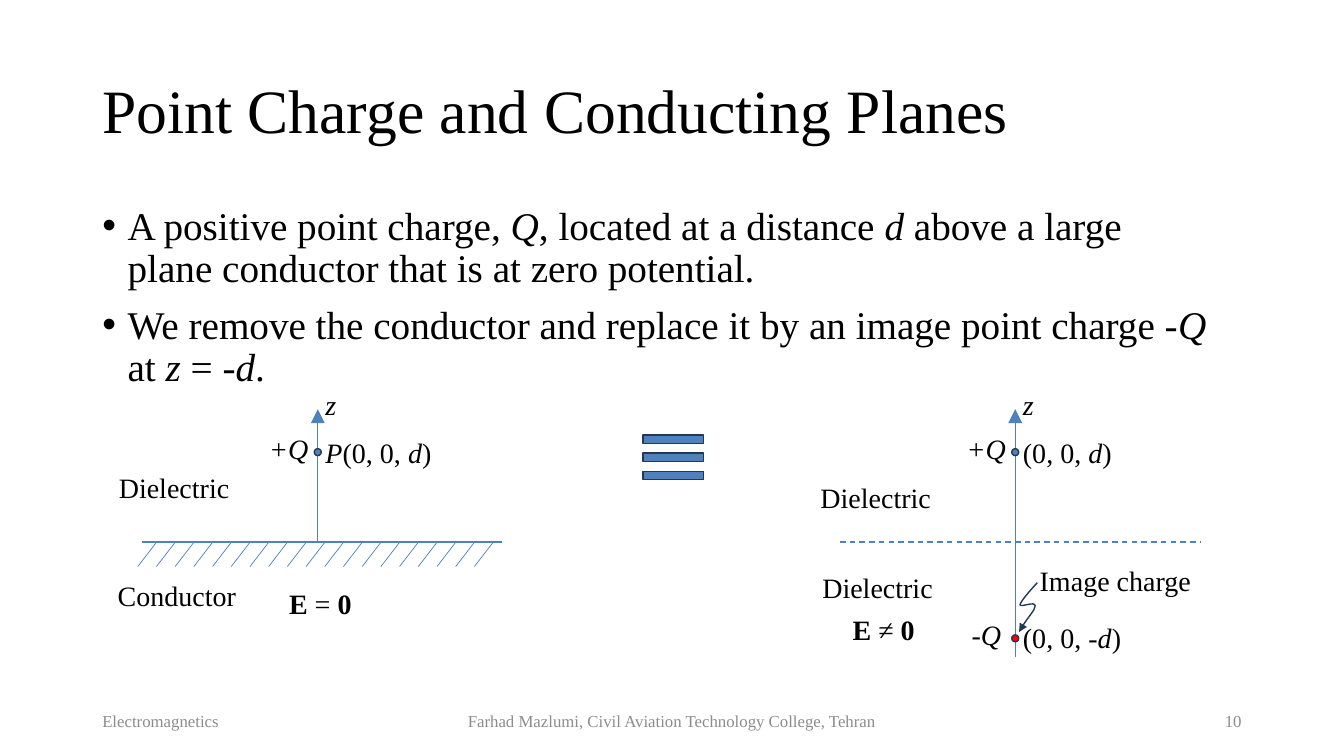
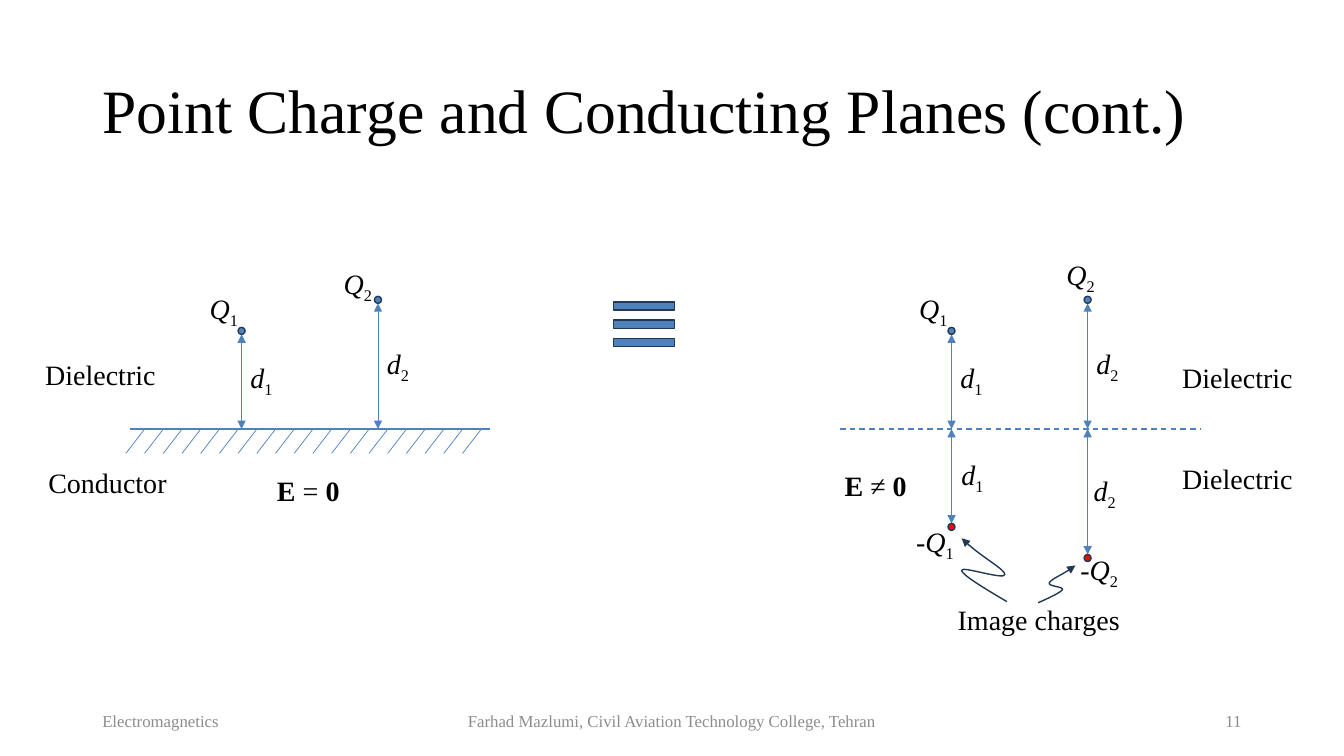
from dataclasses import dataclass

from lxml.etree import SubElement
from pptx import Presentation
from pptx.dml.color import RGBColor
from pptx.enum.dml import MSO_LINE
from pptx.enum.shapes import MSO_CONNECTOR, MSO_SHAPE
from pptx.enum.text import MSO_ANCHOR, MSO_AUTO_SIZE, PP_ALIGN
from pptx.oxml.ns import qn
from pptx.util import Pt


@dataclass(frozen=True)
class Theme:
    font: str = "Times New Roman"
    ink: RGBColor = RGBColor(0, 0, 0)
    muted: RGBColor = RGBColor(0x8C, 0x8C, 0x8C)
    blue: RGBColor = RGBColor(0x4F, 0x81, 0xBD)
    navy: RGBColor = RGBColor(0x23, 0x39, 0x53)
    red: RGBColor = RGBColor(0xFF, 0, 0)
    title_size: int = 44
    body_size: int = 28
    label_size: int = 20
    footer_size: int = 12


THEME = Theme()
TITLE_LAYOUT, BODY_LAYOUT = 5, 1
PLANE_WIDTH = 257
DOT = 5

FOOTERS = [
    (66, 216, PP_ALIGN.LEFT, "Electromagnetics"),
    (318, 324, PP_ALIGN.CENTER,
     "Farhad Mazlumi, Civil Aviation Technology College, Tehran"),
]
BULLETS = [
    ["A positive point charge, ", ("Q", "i"), ", located at a distance ", ("d", "i"),
     " above a large plane conductor that is at zero potential."],
    ["We remove the conductor and replace it by an image point charge -", ("Q", "i"),
     " at ", ("z", "i"), " = -", ("d", "i"), "."],
]
FIELD_ZERO = [("E", "b"), " = ", ("0", "b")]
FIELD_NONZERO = [("E ", "b"), "≠ ", ("0", "b")]


def indexed(symbol, index):
    return [(symbol, "i"), (str(index), "sub")]


def place(box, left, top, width, height):
    box.left, box.top, box.width, box.height = map(Pt, (left, top, width, height))


def write(para, spans, size, color=THEME.ink, align=PP_ALIGN.LEFT):
    para.alignment = align
    para.font.name = THEME.font
    para.font.size = Pt(size)
    para.font.color.rgb = color
    for item in spans:
        text, style = (item, "") if isinstance(item, str) else item
        span = para.add_run()
        span.text = text
        if style == "i":
            span.font.italic = True
        elif style == "b":
            span.font.bold = True
        elif style == "sub":
            span._r.get_or_add_rPr().set("baseline", "-25000")


def add_text(page, left, top, width, height, spans, size, **style):
    box = page.shapes.add_textbox(Pt(left), Pt(top), Pt(width), Pt(height))
    box.text_frame.word_wrap = True
    write(box.text_frame.paragraphs[0], spans, size, **style)
    return box


def add_label(page, left, top, width, spans, align=PP_ALIGN.LEFT):
    spans = [spans] if isinstance(spans, str) else spans
    add_text(page, left, top, width, 31.5, spans, THEME.label_size, align=align)


def add_page(deck, layout, title, number):
    page = deck.slides.add_slide(deck.slide_layouts[layout])
    heading = page.shapes.title
    place(heading, 66, 28.8, 828, 104.4)
    frame = heading.text_frame
    frame.auto_size = MSO_AUTO_SIZE.NONE
    frame.vertical_anchor = MSO_ANCHOR.MIDDLE
    frame.paragraphs[0].line_spacing = 0.9
    write(frame.paragraphs[0], [title], THEME.title_size)
    for left, width, align, text in FOOTERS + [(678, 216, PP_ALIGN.RIGHT, str(number))]:
        box = add_text(page, left, 500.4, width, 28.8, [text], THEME.footer_size,
                       color=THEME.muted, align=align)
        box.text_frame.vertical_anchor = MSO_ANCHOR.MIDDLE
    return page


def fill_body(page, bullets):
    body = page.placeholders[1]
    place(body, 66, 144, 807, 342.7)
    frame = body.text_frame
    frame.auto_size = MSO_AUTO_SIZE.NONE
    for position, spans in enumerate(bullets):
        para = frame.add_paragraph() if position else frame.paragraphs[0]
        para.line_spacing = 0.9
        para.space_before = Pt(10)
        write(para, spans, THEME.body_size)
        properties = para._p.get_or_add_pPr()
        properties.set("marL", str(Pt(18)))
        properties.set("indent", str(-Pt(18)))


def add_arrowheads(shape, ends, size="med"):
    outline = shape.element.spPr.find(qn("a:ln"))
    for end in ends:
        SubElement(outline, qn(f"a:{end}"), type="triangle", w=size, len=size)


def add_line(page, start, end, weight=0.5, dash=None, ends=(), size="med"):
    line = page.shapes.add_connector(MSO_CONNECTOR.STRAIGHT, *map(Pt, start + end))
    line.line.color.rgb = THEME.blue
    line.line.width = Pt(weight)
    if dash:
        line.line.dash_style = dash
    add_arrowheads(line, ends, size)
    SubElement(line.element.spPr, qn("a:effectLst"))


def add_solid(page, kind, left, top, width, height, color=THEME.blue):
    shape = page.shapes.add_shape(kind, *map(Pt, (left, top, width, height)))
    shape.shadow.inherit = False
    shape.fill.solid()
    shape.fill.fore_color.rgb = color
    shape.line.color.rgb = THEME.navy
    shape.line.width = Pt(1)


def add_charge(page, x, y, color=THEME.blue):
    add_solid(page, MSO_SHAPE.OVAL, x - DOT / 2, y - DOT / 2, DOT, DOT, color)


def add_equivalence(page, left, top):
    for row in range(3):
        add_solid(page, MSO_SHAPE.MATH_MINUS, left, top + 13 * row, 59, 25.2)


def add_conductor(page, left, y):
    add_line(page, (left, y), (left + PLANE_WIDTH, y), 1.5)
    for stroke in range(19):
        x = left + 10.5 + 13.36 * stroke
        add_line(page, (x, y), (x - 13.5, y + 17.5))


def add_image_plane(page, y):
    add_line(page, (600, y), (600 + PLANE_WIDTH, y), 1, MSO_LINE.DASH)


def add_axis(page, x, bottom):
    add_line(page, (x, bottom), (x, 292.3), ends=["tailEnd"], size="lg")


def add_measured_charge(page, x, plane, rise, color=THEME.blue):
    y = plane - rise
    edge = y + DOT / 2 if rise > 0 else y - DOT / 2
    add_line(page, (x, plane), (x, edge), ends=["headEnd", "tailEnd"])
    add_charge(page, x, y, color)


def add_curved_arrow(page, points):
    corners = [tuple(map(Pt, point)) for point in points]
    builder = page.shapes.build_freeform(*corners[0])
    builder.add_line_segments(corners[1:], close=False)
    curve = builder.convert_to_shape()
    curve.shadow.inherit = False
    curve.fill.background()
    curve.line.color.rgb = THEME.navy
    curve.line.width = Pt(1)
    add_arrowheads(curve, ["tailEnd"])
    outline = next(curve.element.iter(qn("a:path")))
    segments = outline.findall(qn("a:lnTo"))
    for first in range(0, len(segments), 3):
        bezier = SubElement(outline, qn("a:cubicBezTo"))
        for segment in segments[first:first + 3]:
            bezier.append(segment[0])
            outline.remove(segment)


def build_single_charge(deck):
    page = add_page(deck, BODY_LAYOUT, "Point Charge and Conducting Planes", 10)
    fill_body(page, BULLETS)
    plane, charge_y, image_y = 387.2, 323, 456
    left_axis, right_axis = 227, 725.2

    add_conductor(page, 101.4, plane)
    add_image_plane(page, plane)
    for x, bottom in [(left_axis, plane), (right_axis, 469.4)]:
        add_axis(page, x, bottom)
        add_charge(page, x, charge_y)
        add_label(page, x - 1.6, 272.9, 24, [("z", "i")])
        add_label(page, x - 41.8, 304.6, 42.5, [("+Q", "i")])
    add_charge(page, right_axis, image_y, THEME.red)
    add_equivalence(page, 451.4, 301)

    coordinates = ["(0, 0,", (" d", "i"), ")"]
    add_label(page, left_axis - 1.6, 307.4, 91, [("P", "i")] + coordinates)
    add_label(page, right_axis - 1.6, 307.4, 91, coordinates)
    add_label(page, right_axis - 1.6, 439.9, 91, ["(0, 0,", (" -d", "i"), ")"])
    add_label(page, 686.9, 437.8, 42.5, [("-Q", "i")])
    for left, top, text in [(77.8, 332.6, "Dielectric"), (77, 409.7, "Conductor"),
                            (579, 339.8, "Dielectric"), (580.3, 403.9, "Dielectric")]:
        add_label(page, left, top, 100, text)
    add_label(page, 199.4, 415.4, 61, FIELD_ZERO)
    add_label(page, 601.9, 434.2, 61, FIELD_NONZERO)
    add_label(page, 730.8, 398.9, 131.8, "Image charge", PP_ALIGN.CENTER)
    add_curved_arrow(page, [
        (740.9, 416.2), (735.1, 422.6), (729.4, 429.1), (728.6, 432), (728.6, 434.2),
        (739.4, 429.1), (739.4, 432.7), (739.4, 435.6), (733, 442.1), (727.9, 451.4)])


def build_two_charges(deck):
    page = add_page(deck, TITLE_LAYOUT, "Point Charge and Conducting Planes (cont.)", 11)
    plane = 306.4
    rises = {1: 70, 2: 92.2}
    distance_tops = {1: 254.2, 2: 244.1}
    conductor_side = {1: 172.6, 2: 270}
    image_side = {1: 679.7, 2: 776.9}

    add_conductor(page, 92.9, plane)
    add_image_plane(page, plane)
    add_equivalence(page, 430.4, 206)
    for side in (conductor_side, image_side):
        for index, x in side.items():
            add_measured_charge(page, x, plane, rises[index])
            add_label(page, x - 0.8, distance_tops[index], 33, indexed("d", index))
    for index, x in image_side.items():
        add_measured_charge(page, x, plane, -rises[index], THEME.red)

    for left, top, symbol, index in [
            (142.6, 204.5, "Q", 1), (238.3, 186.5, "Q", 2),
            (649.4, 204.5, "Q", 1), (754.6, 180.7, "Q", 2),
            (647.3, 370.8, "-Q", 1), (764.6, 391, "-Q", 2),
            (679.7, 323.3, "d", 1), (774, 334.8, "d", 2)]:
        add_label(page, left, top, 42.5, indexed(symbol, index))
    for left, top, text in [(25.2, 252, "Dielectric"), (27.4, 329, "Conductor"),
                            (837.4, 254.2, "Dielectric"), (837.4, 326.2, "Dielectric")]:
        add_label(page, left, top, 100, text)
    add_label(page, 190.8, 334.8, 61, FIELD_ZERO)
    add_label(page, 596.2, 331.2, 61, FIELD_NONZERO)
    add_label(page, 676.1, 427, 131.8, "Image charges", PP_ALIGN.CENTER)
    add_curved_arrow(page, [
        (719.3, 429.8), (703.4, 420.5), (686.9, 410.4), (686.9, 407.5), (686.2, 403.9),
        (717.8, 414.7), (717.8, 410.4), (717.8, 406.8), (699.8, 397.4), (686.9, 384.5)])
    add_curved_arrow(page, [
        (741.6, 430.6), (749.5, 427), (757.4, 423.4), (758.9, 421.2), (760.3, 419),
        (748.1, 419), (749.5, 416.2), (751.7, 413.3), (759.6, 410.4), (768.2, 403.9)])


def main():
    deck = Presentation()
    deck.slide_width, deck.slide_height = Pt(960), Pt(540)
    build_single_charge(deck)
    build_two_charges(deck)
    deck.save("out.pptx")


if __name__ == "__main__":
    main()
